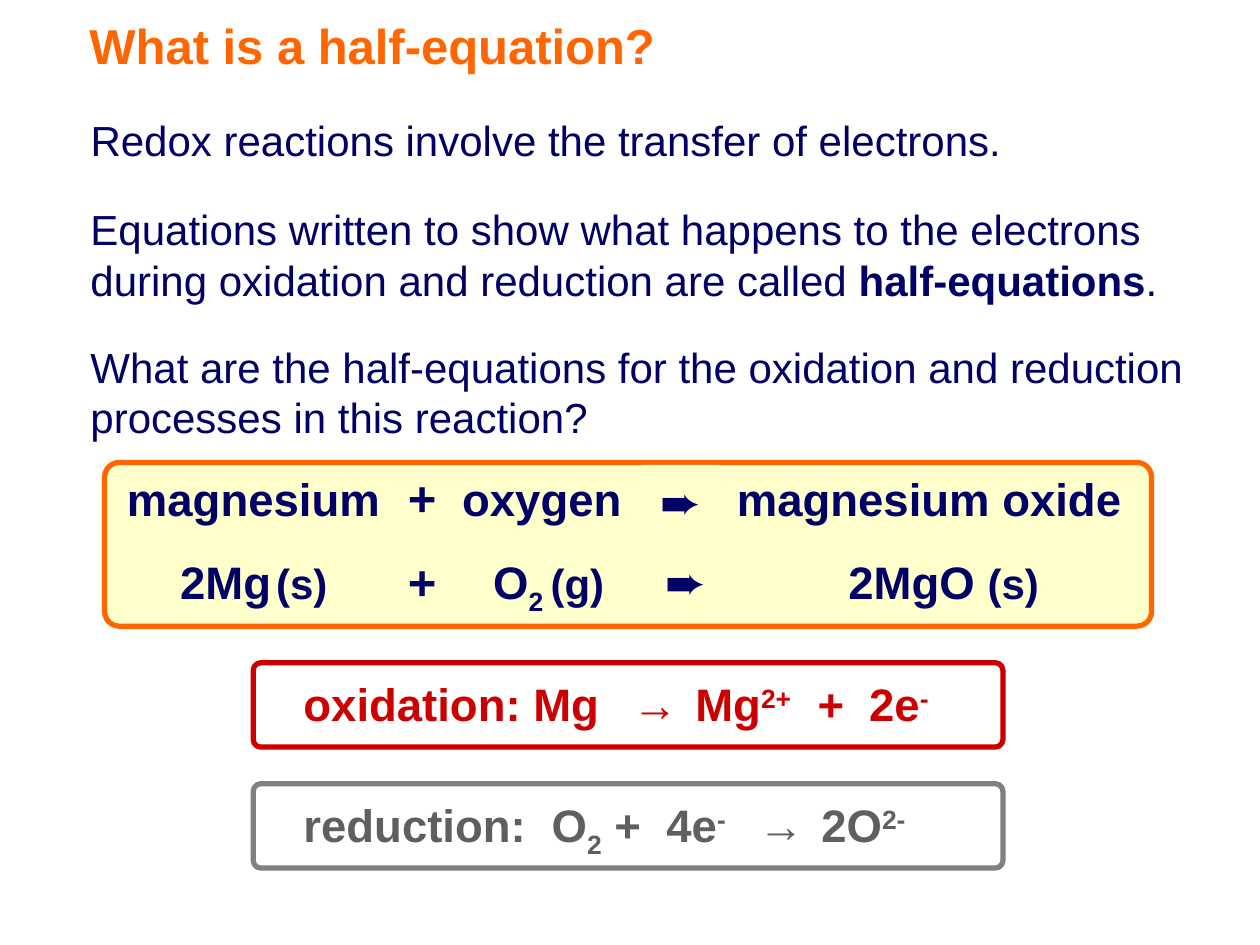
"""Build a slide that explains half-equations for magnesium oxide."""
import pptx
import pptx.dml.color
import pptx.enum.shapes
import pptx.enum.text
import pptx.util
from lxml import etree
from pptx.oxml.ns import qn
from pptx.util import Inches

COLORS = {"orange": "FF6600", "navy": "000066", "red": "CC0000",
          "gray_text": "5F5F5F", "gray_line": "808080", "cream": "FFFFCC"}
ALIGN = pptx.enum.text.PP_ALIGN
ANCHOR = pptx.enum.text.MSO_ANCHOR
SUPERSCRIPT, SUBSCRIPT = 30, -25


def rgb(name):
    """Return the named colour."""
    return pptx.dml.color.RGBColor.from_string(COLORS[name])


def add_runs(paragraph, runs, size, color, bold):
    """Add (text, overrides) runs to a paragraph."""
    for text, changes in runs:
        run = paragraph.add_run()
        run.text = text
        run.font.name = "Arial"
        run.font.size = pptx.util.Pt(changes.get("size", size))
        run.font.bold = changes.get("bold", bold)
        run.font.color.rgb = rgb(color)
        if "baseline" in changes:
            run._r.get_or_add_rPr().set("baseline", str(changes["baseline"] * 1000))


def add_tab_stops(paragraph, stops):
    """Set left tab stops, in inches from the text edge."""
    tab_list = etree.SubElement(paragraph._p.get_or_add_pPr(), qn("a:tabLst"))
    for stop in stops:
        etree.SubElement(tab_list, qn("a:tab"), pos=str(Inches(stop)), algn="l")


def add_text(slide, box, runs, size=26, color="navy", bold=True,
             align=ALIGN.LEFT, stops=(), fill=None):
    """Add a one-paragraph text box and return its paragraph."""
    shape = slide.shapes.add_textbox(*map(Inches, box))
    shape.text_frame.word_wrap = True
    if fill:
        shape.fill.solid()
        shape.fill.fore_color.rgb = rgb(fill)
    paragraph = shape.text_frame.paragraphs[0]
    if stops:
        add_tab_stops(paragraph, stops)
    paragraph.alignment = align
    add_runs(paragraph, runs, size, color, bold)
    return paragraph


def add_frame(slide, box, line, fill=None):
    """Add a rounded frame."""
    shape = slide.shapes.add_shape(
        pptx.enum.shapes.MSO_SHAPE.ROUNDED_RECTANGLE, *map(Inches, box))
    shape.adjustments[0] = 0.09
    shape.shadow.inherit = False
    shape.line.color.rgb = rgb(line)
    shape.line.width = pptx.util.Pt(3)
    if fill:
        shape.fill.solid()
        shape.fill.fore_color.rgb = rgb(fill)
    else:
        shape.fill.background()


def add_title(slide, text):
    """Place and format the title."""
    title = slide.shapes.title
    title.left, title.top, title.width, title.height = map(Inches, (0.61, 0.06, 7.92, 0.6))
    frame = title.text_frame
    frame.auto_size = pptx.enum.text.MSO_AUTO_SIZE.NONE
    frame.vertical_anchor = ANCHOR.MIDDLE
    frame.paragraphs[0].alignment = ALIGN.LEFT
    add_runs(frame.paragraphs[0], [(text, {})], 28, "orange", True)


def add_reaction(slide):
    """Add the framed word equation above its symbol equation."""
    add_frame(slide, (0.83, 3.67, 8.31, 1.3), "orange", "cream")
    words = add_text(slide, (0.91, 3.75, 8.2, 0.47),
                     [("magnesium\t", {}), ("+\t", {"size": 28}),
                      ("oxygen\tmagnesium oxide", {})],
                     stops=(2.23, 2.66, 4.84))
    words.line_spacing = 0.8
    state = {"size": 24}
    formulas = [
        (1.3, 1.43, [("2Mg", {}), (" ", {"size": 10}), ("(s)", state)]),
        (3.72, 1.27, [("O", {}), ("2 ", {"baseline": SUBSCRIPT}), ("(g)", state)]),
        (6.49, 2, [("2MgO ", {}), ("(s)", state)]),
    ]
    for left, width, runs in formulas:
        add_text(slide, (left, 4.35, width, 0.53), runs, align=ALIGN.CENTER)
    symbols = [(5.09, 3.69, 0.62, "➨"), (3.12, 4.33, 0.46, "+"), (5.13, 4.33, 0.62, "➨")]
    for left, top, width, symbol in symbols:
        add_text(slide, (left, top, width, 0.57), [(symbol, {})], size=28,
                 align=ALIGN.CENTER, fill="cream")


def add_half_equation(slide, top, runs, stops, color, line):
    """Add a framed half-equation."""
    add_frame(slide, (2.01, top, 5.95, 0.67), line)
    add_text(slide, (2.31, top + 0.06, 5.31, 0.53), runs, color=color, stops=stops)


def main():
    """Build and save the slide."""
    presentation = pptx.Presentation()
    presentation.slide_width, presentation.slide_height = Inches(10), Inches(7.5)
    slide = presentation.slides.add_slide(presentation.slide_layouts[5])
    add_title(slide, "What is a half-equation?")
    body = [
        ((0.62, 0.86, 7.61, 0.5),
         [("Redox reactions involve the transfer of electrons.", {})]),
        ((0.62, 1.57, 8.83, 0.9),
         [("Equations written to show what happens to the electrons during "
           "oxidation and reduction are called ", {}),
          ("half-equations", {"bold": True}), (".", {})]),
        ((0.62, 2.66, 8.9, 0.9),
         [("What are the half-equations for the oxidation and reduction "
           "processes in this reaction?", {})]),
    ]
    for box, runs in body:
        add_text(slide, box, runs, size=24, bold=False)
    add_reaction(slide)
    raised, lowered = {"baseline": SUPERSCRIPT}, {"baseline": SUBSCRIPT}
    add_half_equation(
        slide, 5.26,
        [("oxidation: Mg\t→\tMg", {}), ("2+", raised), ("\t+\t2e", {}), ("-", raised)],
        (2.61, 3.11, 4.08, 4.49), "red", "red")
    add_half_equation(
        slide, 6.22,
        [("reduction:\tO", {}), ("2", lowered), (" +\t4e", {}), ("-", raised),
         ("\t→\t2O", {}), ("2-", raised)],
        (1.97, 2.88, 3.61, 4.11), "gray_text", "gray_line")
    presentation.save("out.pptx")


if __name__ == "__main__":
    main()
